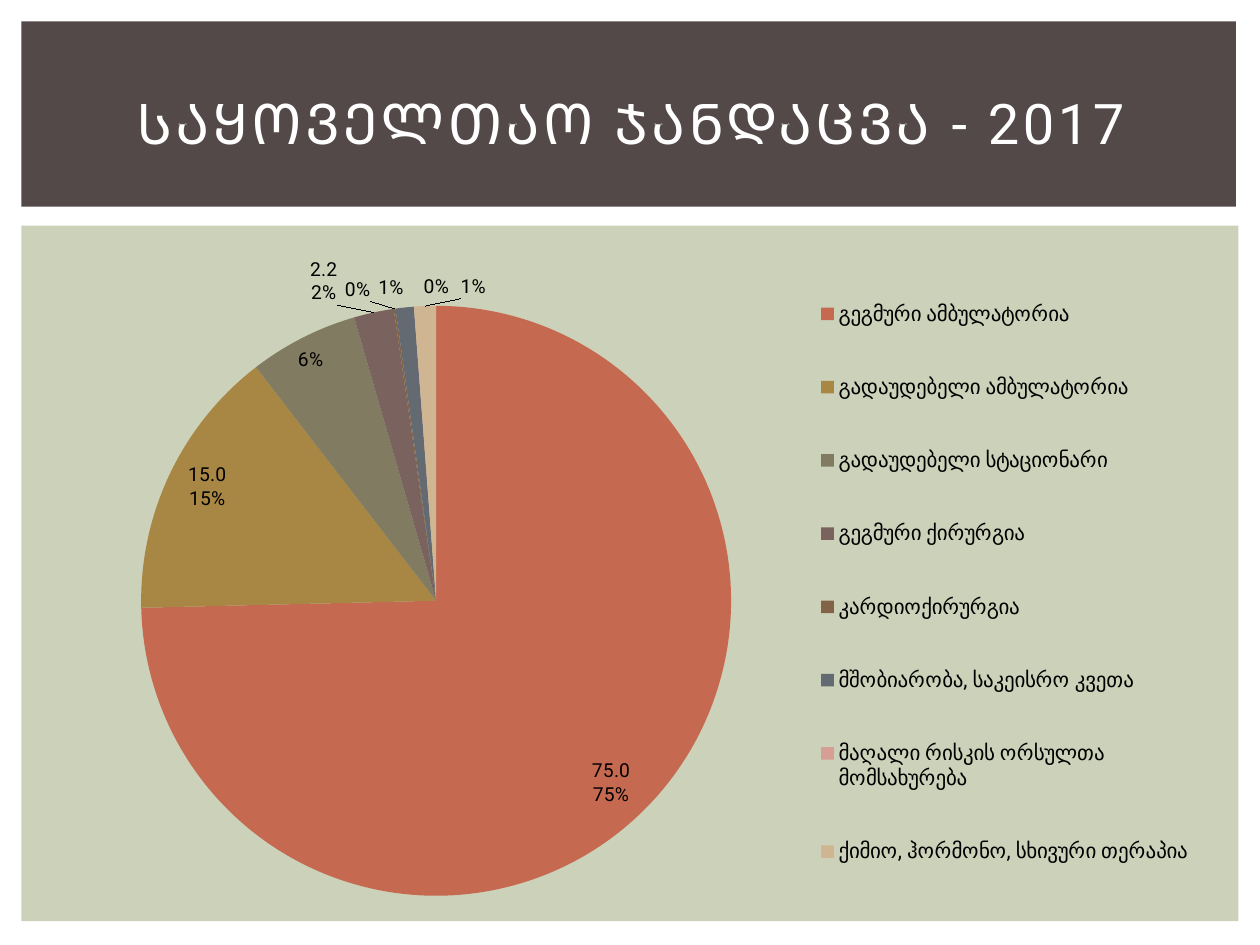
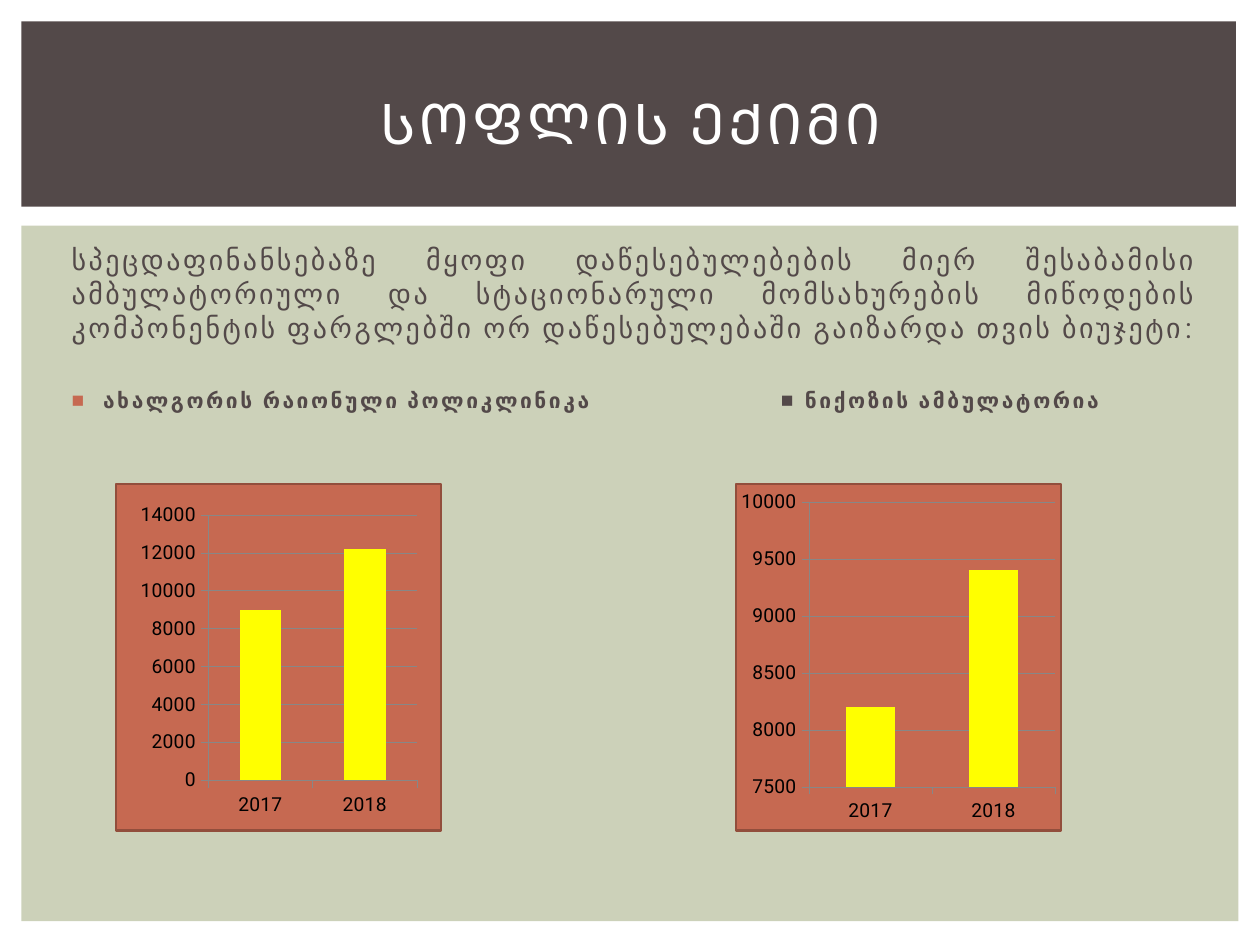
from dataclasses import dataclass

from lxml import etree
from pptx import Presentation
from pptx.chart.chart import Chart
from pptx.chart.data import CategoryChartData
from pptx.dml.color import RGBColor
from pptx.enum.chart import XL_CHART_TYPE, XL_LEGEND_POSITION, XL_TICK_MARK
from pptx.enum.shapes import MSO_SHAPE
from pptx.enum.text import MSO_ANCHOR, PP_ALIGN
from pptx.oxml import parse_xml
from pptx.oxml.ns import nsdecls, qn
from pptx.slide import Slide
from pptx.text.text import TextFrame
from pptx.util import Pt

PIE, COLUMNS = XL_CHART_TYPE.PIE, XL_CHART_TYPE.COLUMN_CLUSTERED
LEGEND_RIGHT, TICK_OUT = XL_LEGEND_POSITION.RIGHT, XL_TICK_MARK.OUTSIDE
RECT = MSO_SHAPE.RECTANGLE
LEFT, CENTER, JUSTIFY = PP_ALIGN.LEFT, PP_ALIGN.CENTER, PP_ALIGN.JUSTIFY
TOP, MIDDLE = MSO_ANCHOR.TOP, MSO_ANCHOR.MIDDLE
TITLE_ONLY = 5
EMU_PER_PX = 9144  # 100 px to the inch


@dataclass(frozen=True)
class Theme:
    font: str = "Roboto"
    band: str = "534949"
    panel: str = "CCD1B9"
    accent: str = "C66951"
    accent_edge: str = "924E3C"
    bar: str = "FFFF00"
    grid: str = "878787"
    white: str = "FFFFFF"
    black: str = "000000"
    slices: tuple[str, ...] = ("C66951", "A88744", "817B62", "7A635E",
                               "836348", "636A71", "D69F95", "D0B592")
    title_size: int = 32
    body_size: int = 16
    small_size: int = 12
    label_size: int = 11


@dataclass(frozen=True)
class Box:
    x: int
    y: int
    w: int
    h: int

    def emu(self) -> tuple[int, ...]:
        return tuple(v * EMU_PER_PX for v in (self.x, self.y, self.w, self.h))


@dataclass(frozen=True)
class Layout:
    """Place inside a chart, as fractions of its size."""
    x: float
    y: float
    w: float
    h: float


@dataclass(frozen=True)
class Slice:
    name: str
    value: float
    shift: tuple[float, float]
    show_value: bool = False
    label_pos: str = "outEnd"


@dataclass(frozen=True)
class Clinic:
    name: str
    heading: Box
    bullet_color: str
    indent: int
    card: Box
    chart: Box
    plot: Layout
    budgets: tuple[int, int]
    axis: tuple[int, int, int]


THEME = Theme()
TITLE_BOX = Box(42, 39, 917, 115)
BANDS = ((Box(17, 179, 966, 552), THEME.panel), (Box(17, 17, 964, 147), THEME.band))
PIE_BOX = Box(42, 188, 919, 537)
PIE_PLOT = Layout(0.076, 0.102, 0.51, 0.872)
PIE_LEGEND = Layout(0.657, 0.024, 0.33, 0.975)
INTRO_BOX = Box(47, 188, 914, 90)
YEARS = ("2017", "2018")

SERVICES = (
    Slice("გეგმური ამბულატორია", 75, (-0.01, 0.007), True, "inEnd"),
    Slice("გადაუდებელი ამბულატორია", 15, (0.01, -0.02), True, "inEnd"),
    Slice("გადაუდებელი სტაციონარი", 6, (-0.007, 0.006), False, "inEnd"),
    Slice("გეგმური ქირურგია", 2.2, (-0.03, 0), True),
    Slice("კარდიოქირურგია", 0.1, (-0.02, 0)),
    Slice("მშობიარობა, საკეისრო კვეთა", 1, (0, 0)),
    Slice("მაღალი რისკის ორსულთა მომსახურება", 0.01, (0.02, 0)),
    Slice("ქიმიო, ჰორმონო, სხივური თერაპია", 1.2, (0.042, 0)),
)
INTRO = ("სპეცდაფინანსებაზე მყოფი დაწესებულებების მიერ შესაბამისი ამბულატორიული "
         "და სტაციონარული მომსახურების მიწოდების კომპონენტის ფარგლებში ორ "
         "დაწესებულებაში გაიზარდა თვის ბიუჯეტი:")
CLINICS = (
    Clinic("ახალგორის რაიონული პოლიკლინიკა", Box(47, 303, 480, 32), THEME.accent, 25,
           Box(92, 384, 258, 275), Box(90, 384, 258, 275),
           Layout(0.292, 0.089, 0.642, 0.767), (9000, 12200), (0, 14000, 2000)),
    Clinic("ნიქოზის ამბულატორია", Box(610, 303, 350, 32), THEME.band, 19,
           Box(584, 384, 258, 275), Box(584, 384, 258, 275),
           Layout(0.225, 0.052, 0.757, 0.823), (8200, 9400), (7500, 10000, 500)),
)


def rgb(value: str) -> RGBColor:
    return RGBColor.from_string(value)


def write(tf: TextFrame, text: str, *, size: int, color: str, bold: bool = False,
          align: PP_ALIGN = LEFT, anchor: MSO_ANCHOR = TOP, spacing: float = 1.5,
          bullet_color: str = "", indent: int = 0) -> None:
    tf.word_wrap = True
    tf.vertical_anchor = anchor
    p = tf.paragraphs[0]
    p.alignment = align
    r = p.add_run()
    r.text = text
    r.font.size, r.font.bold, r.font.name = Pt(size), bold, THEME.font
    r.font.color.rgb = rgb(color)
    r._r.get_or_add_rPr().set("spc", str(int(spacing * 100)))
    if bullet_color:
        pPr = p._p.get_or_add_pPr()
        pPr.set("marL", str(indent * EMU_PER_PX))
        pPr.set("indent", str(-indent * EMU_PER_PX))
        clr = etree.SubElement(pPr, qn("a:buClr"))
        etree.SubElement(clr, qn("a:srgbClr")).set("val", bullet_color)
        etree.SubElement(pPr, qn("a:buFont")).set("typeface", "Arial")
        etree.SubElement(pPr, qn("a:buChar")).set("char", "■")


def add_rect(s: Slide, box: Box, fill: str, edge: str = ""):
    sp = s.shapes.add_shape(RECT, *box.emu())
    sp.shadow.inherit = False
    sp.fill.solid()
    sp.fill.fore_color.rgb = rgb(fill)
    if edge:
        sp.line.color.rgb = rgb(edge)
        sp.line.width = Pt(1.5)
    else:
        sp.line.fill.background()
    return sp


def add_titled_slide(prs: Presentation, title: str) -> Slide:
    s = prs.slides.add_slide(prs.slide_layouts[TITLE_ONLY])
    sp = s.shapes.title
    sp.left, sp.top, sp.width, sp.height = TITLE_BOX.emu()
    write(sp.text_frame, title, size=THEME.title_size, color=THEME.white,
          align=CENTER, anchor=MIDDLE, spacing=2)
    for box, fill in BANDS:
        sp._element.addprevious(add_rect(s, box, fill)._element)
    return s


def add_text(s: Slide, box: Box, text: str, **style) -> None:
    write(s.shapes.add_textbox(*box.emu()).text_frame, text, **style)


def layout_xml(place: Layout, inner: bool = False) -> str:
    target = '<c:layoutTarget val="inner"/>' if inner else ""
    modes = "".join(f'<c:{k}Mode val="edge"/>' for k in "xy")
    sizes = "".join(f'<c:{k} val="{getattr(place, k)}"/>' for k in "xywh")
    return (f'<c:layout {nsdecls("c")}><c:manualLayout>{target}{modes}{sizes}'
            "</c:manualLayout></c:layout>")


def add_plain_chart(s: Slide, kind: XL_CHART_TYPE, box: Box, names: tuple[str, ...],
                    values: tuple[float, ...], plot: Layout,
                    number_format: str = "General") -> Chart:
    """Add a one-series chart with a fixed plot area and no background."""
    data = CategoryChartData(number_format=number_format)
    data.categories = names
    data.add_series("Series 1", values)
    chart = s.shapes.add_chart(kind, *box.emu(), data).chart
    chart.has_title = chart.has_legend = False
    chart.font.size, chart.font.name = Pt(THEME.label_size), THEME.font
    chart.font.color.rgb = rgb(THEME.black)
    space = chart._chartSpace
    area = space.chart.plotArea
    for old in area.findall(qn("c:layout")):
        area.remove(old)
    area.insert(0, parse_xml(layout_xml(plot, inner=True)))
    no_fill = (f'<c:spPr {nsdecls("c", "a")}><a:noFill/>'
               "<a:ln><a:noFill/></a:ln></c:spPr>")
    area.append(parse_xml(no_fill))
    space.find(qn("c:txPr")).addprevious(parse_xml(no_fill))
    return chart


def slice_label(idx: int, item: Slice):
    x, y = item.shift
    flags = {"LegendKey": 0, "Val": int(item.show_value), "CatName": 0,
             "SerName": 0, "Percent": 1, "BubbleSize": 0}
    shows = "".join(f'<c:show{k} val="{v}"/>' for k, v in flags.items())
    return parse_xml(
        f'<c:dLbl {nsdecls("c")}><c:idx val="{idx}"/>'
        f'<c:layout><c:manualLayout><c:x val="{x}"/><c:y val="{y}"/>'
        "</c:manualLayout></c:layout>"
        '<c:numFmt formatCode="0%" sourceLinked="0"/>'
        f'<c:dLblPos val="{item.label_pos}"/>{shows}'
        "<c:separator>\n</c:separator></c:dLbl>")


def add_services_pie(s: Slide) -> None:
    chart = add_plain_chart(s, PIE, PIE_BOX, tuple(i.name for i in SERVICES),
                            tuple(i.value for i in SERVICES), PIE_PLOT, "0.0")
    chart.has_legend = True
    legend = chart.legend
    legend.position, legend.include_in_layout = LEGEND_RIGHT, False
    legend.font.size, legend.font.name = Pt(THEME.small_size), THEME.font
    legend.font.color.rgb = rgb(THEME.black)
    element = legend._element
    for old in element.findall(qn("c:layout")):
        element.remove(old)
    element.find(qn("c:legendPos")).addnext(parse_xml(layout_xml(PIE_LEGEND)))

    series = chart.plots[0].series[0]
    labels = series.data_labels
    labels.show_percentage, labels.show_value = True, False
    labels.number_format, labels.number_format_is_linked = "0%", False
    labels.font.size, labels.font.name = Pt(THEME.label_size), THEME.font
    labels.font.color.rgb = rgb(THEME.black)
    for idx, (item, color) in enumerate(zip(SERVICES, THEME.slices)):
        fill = series.points[idx].format.fill
        fill.solid()
        fill.fore_color.rgb = rgb(color)
        labels._element.insert(idx, slice_label(idx, item))
    for old in labels._element.findall(qn("c:showLeaderLines")):
        labels._element.remove(old)
    etree.SubElement(labels._element, qn("c:showLeaderLines")).set("val", "1")


def add_budget_columns(s: Slide, clinic: Clinic) -> None:
    chart = add_plain_chart(s, COLUMNS, clinic.chart, YEARS, clinic.budgets, clinic.plot)
    plot = chart.plots[0]
    plot.gap_width, plot.vary_by_categories = 150, False
    fill = plot.series[0].format.fill
    fill.solid()
    fill.fore_color.rgb = rgb(THEME.bar)
    axis = chart.value_axis
    axis.minimum_scale, axis.maximum_scale, axis.major_unit = clinic.axis
    axis.has_major_gridlines = True
    for part in (axis, chart.category_axis):
        part.major_tick_mark = TICK_OUT
        part.tick_labels.font.size = Pt(THEME.label_size)
    for part in (axis, chart.category_axis, axis.major_gridlines):
        part.format.line.color.rgb = rgb(THEME.grid)
        part.format.line.width = Pt(0.1)


def build_health_slide(prs: Presentation) -> None:
    s = add_titled_slide(prs, "ᲡᲐᲧᲝᲕᲔᲚᲗᲐᲝ ᲯᲐᲜᲓᲐᲪᲕᲐ - 2017")
    add_services_pie(s)


def build_doctor_slide(prs: Presentation) -> None:
    s = add_titled_slide(prs, "ᲡᲝᲤᲚᲘᲡ ᲔᲥᲘᲛᲘ")
    add_text(s, INTRO_BOX, INTRO, size=THEME.body_size, color=THEME.band, align=JUSTIFY)
    for clinic in CLINICS:
        add_text(s, clinic.heading, clinic.name, size=THEME.small_size, color=THEME.band,
                 bold=True, bullet_color=clinic.bullet_color, indent=clinic.indent)
        add_rect(s, clinic.card, THEME.accent, THEME.accent_edge)
        add_budget_columns(s, clinic)


def main() -> None:
    prs = Presentation()
    prs.slide_width, prs.slide_height = 1000 * EMU_PER_PX, 750 * EMU_PER_PX
    build_health_slide(prs)
    build_doctor_slide(prs)
    prs.save("out.pptx")


if __name__ == "__main__":
    main()
